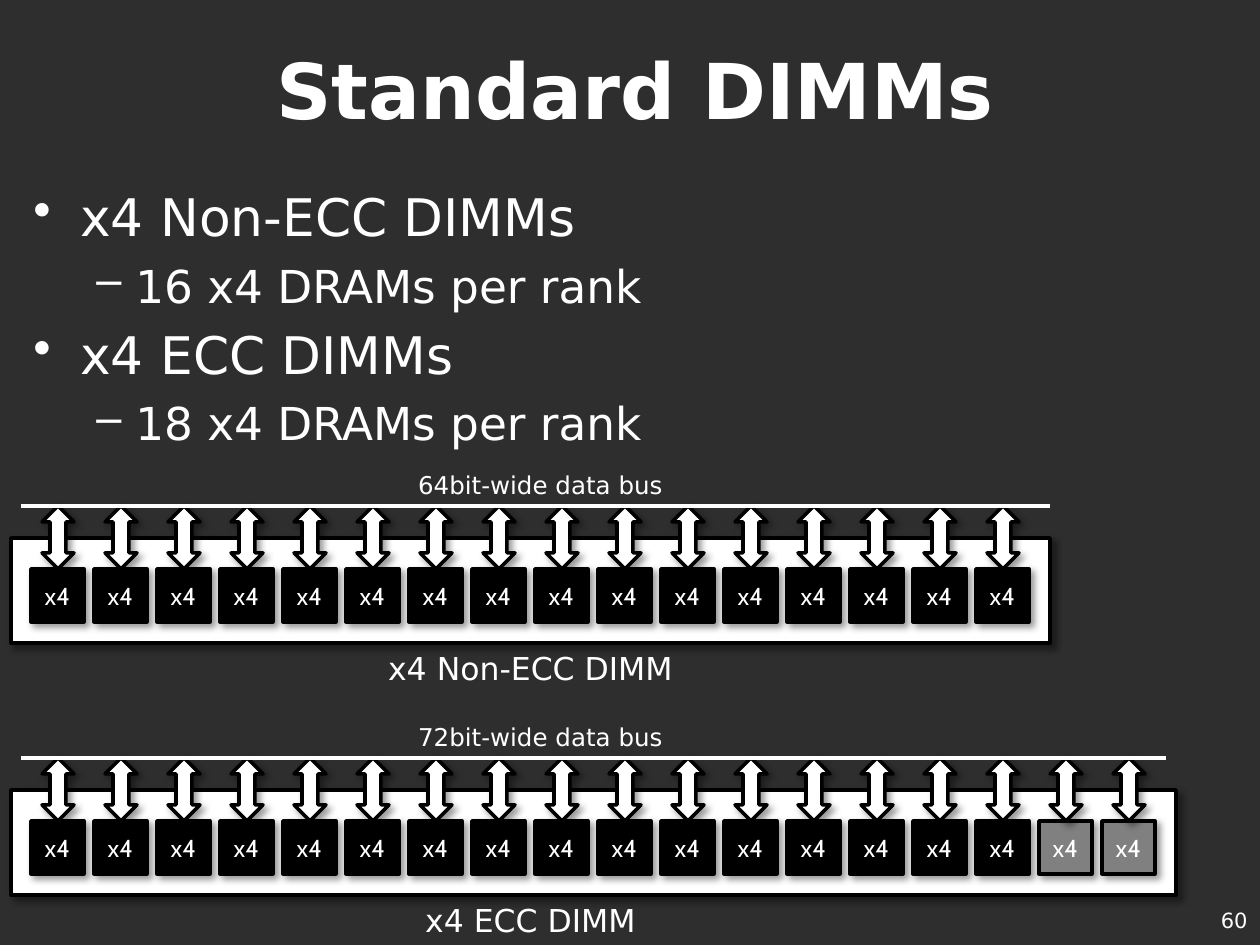
from lxml.etree import SubElement
from pptx import Presentation
from pptx.dml.color import RGBColor
from pptx.enum.shapes import MSO_CONNECTOR, MSO_SHAPE
from pptx.enum.text import MSO_ANCHOR, PP_ALIGN
from pptx.oxml.ns import qn
from pptx.util import Pt

EMU_PER_PX = 914400 / 126
BACKDROP = RGBColor(0x2E, 0x2E, 0x2E)
WHITE = RGBColor(0xFF, 0xFF, 0xFF)
BLACK = RGBColor(0x00, 0x00, 0x00)
GRAY = RGBColor(0x80, 0x80, 0x80)
TEXT_FONT = "DejaVu Sans"
CHIP_FONT = "Cabin"

CHIP_PITCH = 63
DATA_CHIPS = 16
BULLETS = [
    ("x4 Non-ECC DIMMs", 0),
    ("16 x4 DRAMs per rank", 1),
    ("x4 ECC DIMMs", 0),
    ("18 x4 DRAMs per rank", 1),
]
BULLET_STYLES = [("•", 29.6, 47, 47), ("–", 25.9, 102, 39)]


def px(length):
    return round(length * EMU_PER_PX)


class SlideBuilder:
    def __init__(self, slide):
        self.slide = slide
        slide.background.fill.solid()
        slide.background.fill.fore_color.rgb = BACKDROP

    def style_runs(self, paragraph, size, font=TEXT_FONT, bold=False):
        for run in paragraph.runs:
            run.font.size = Pt(size)
            run.font.name = font
            run.font.bold = bold
            run.font.color.rgb = WHITE

    def textbox(self, left, top, width, height, anchor=MSO_ANCHOR.TOP):
        box = self.slide.shapes.add_textbox(px(left), px(top), px(width), px(height))
        frame = box.text_frame
        frame.word_wrap = True
        frame.vertical_anchor = anchor
        return frame

    def text(self, wording, left, top, width, height, size, bold=False,
             align=PP_ALIGN.CENTER, anchor=MSO_ANCHOR.TOP):
        frame = self.textbox(left, top, width, height, anchor)
        frame.text = wording
        frame.paragraphs[0].alignment = align
        self.style_runs(frame.paragraphs[0], size, bold=bold)

    def bullets(self, items, left, top, width, height):
        frame = self.textbox(left, top, width, height)
        frame.text = "\n".join(wording for wording, _ in items)
        for paragraph, (_, level) in zip(frame.paragraphs, items):
            mark, size, margin, hanging = BULLET_STYLES[level]
            paragraph.level = level
            paragraph.space_before = Pt(6)
            self.style_runs(paragraph, size)
            properties = paragraph._p.get_or_add_pPr()
            properties.set("marL", str(px(margin)))
            properties.set("indent", str(-px(hanging)))
            SubElement(properties, qn("a:buChar"), char=mark)

    def add_shadow(self, shape):
        shape.shadow.inherit = False
        effects = shape._element.spPr.find(qn("a:effectLst"))
        shadow = SubElement(effects, qn("a:outerShdw"), blurRad=str(Pt(4)),
                            dist=str(Pt(3)), dir="2700000", algn="tl", rotWithShape="0")
        color = SubElement(shadow, qn("a:srgbClr"), val=str(BLACK))
        SubElement(color, qn("a:alpha"), val="40000")

    def block(self, group, preset, left, top, width, height, fill, wording=""):
        shape = group.shapes.add_shape(preset, px(left), px(top), px(width), px(height))
        shape.fill.solid()
        shape.fill.fore_color.rgb = fill
        shape.line.color.rgb = BLACK
        shape.line.width = Pt(2)
        self.add_shadow(shape)
        if wording:
            frame = shape.text_frame
            frame.text = wording
            frame.word_wrap = False
            frame.vertical_anchor = MSO_ANCHOR.MIDDLE
            frame.paragraphs[0].alignment = PP_ALIGN.CENTER
            self.style_runs(frame.paragraphs[0], 14, CHIP_FONT)

    def bus_line(self, group, left, right, y):
        bus = group.shapes.add_connector(
            MSO_CONNECTOR.STRAIGHT, px(left), px(y), px(right), px(y))
        bus.line.color.rgb = WHITE
        bus.line.width = Pt(2.25)
        SubElement(bus._element.spPr, qn("a:effectLst"))

    def dimm(self, bus_y, chips, bus_right, bus_label, caption):
        group = self.slide.shapes.add_group_shape()
        self.block(group, MSO_SHAPE.RECTANGLE, 11, bus_y + 32,
                   chips * CHIP_PITCH + 31, 105, WHITE)
        for chip in range(chips):
            self.block(group, MSO_SHAPE.RECTANGLE, 31 + chip * CHIP_PITCH, bus_y + 63,
                       53, 53, BLACK if chip < DATA_CHIPS else GRAY, "x4")
        for chip in range(chips):
            self.block(group, MSO_SHAPE.UP_DOWN_ARROW, 42 + chip * CHIP_PITCH, bus_y,
                       32, 63, WHITE)
        self.bus_line(group, 21, bus_right, bus_y)
        self.text(bus_label, 63, bus_y - 42, 955, 43, 14)
        self.text(caption, 53, bus_y + 137, 955, 50, 18)


def main():
    deck = Presentation()
    deck.slide_width, deck.slide_height = px(1260), px(945)
    builder = SlideBuilder(deck.slides.add_slide(deck.slide_layouts[6]))
    builder.text("Standard DIMMs", 21, 10, 1229, 158, 44, bold=True,
                 anchor=MSO_ANCHOR.MIDDLE)
    builder.bullets(BULLETS, 21, 179, 1229, 262)
    builder.text("60", 966, 895, 294, 50, 12, align=PP_ALIGN.RIGHT,
                 anchor=MSO_ANCHOR.MIDDLE)
    builder.dimm(506, 16, 1050, "64bit-wide data bus", "x4 Non-ECC DIMM")
    builder.dimm(758, 18, 1166, "72bit-wide data bus", "x4 ECC DIMM")
    deck.save("out.pptx")


if __name__ == "__main__":
    main()
